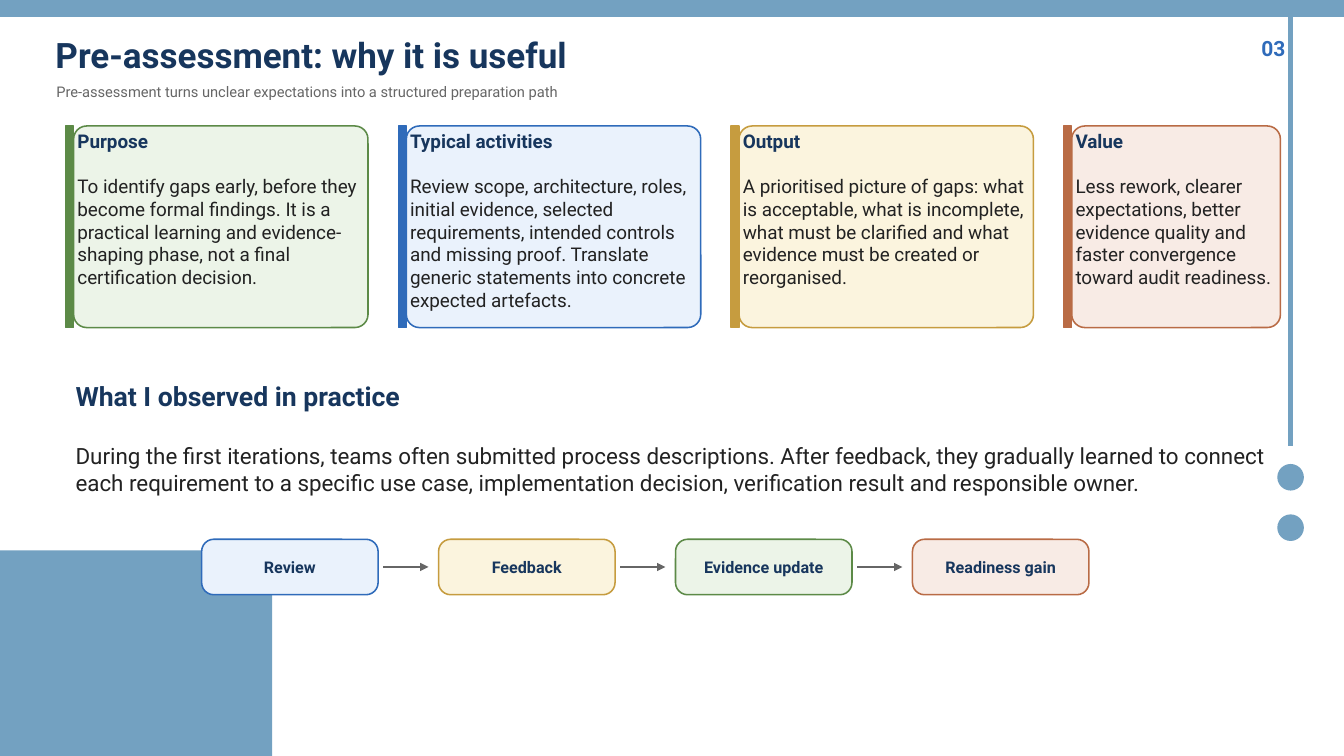
from typing import NamedTuple

from lxml.etree import SubElement
from pptx import Presentation
from pptx.dml.color import RGBColor
from pptx.enum.shapes import MSO_CONNECTOR as Connector, MSO_SHAPE as Preset
from pptx.enum.text import MSO_ANCHOR as Anchor, MSO_AUTO_SIZE as AutoSize, PP_ALIGN as Align
from pptx.oxml.ns import qn
from pptx.util import Inches, Pt

CELL = 0.05
FONT = "Roboto"
NAVY, INK, GREY, BLUE, STEEL = "17365D", "222222", "666666", "2F6BBA", "73A1C1"
GREEN_PAIR = ("ECF4E8", "5C8A47")
BLUE_PAIR = ("EAF2FC", BLUE)
GOLD_PAIR = ("FBF4DE", "C69C3F")
RUST_PAIR = ("F8EBE5", "B96B45")

CARDS = [
    ("Purpose", "To identify gaps early, before they become formal findings. It is a practical "
     "learning and evidence-shaping phase, not a final certification decision.", GREEN_PAIR, 60),
    ("Typical activities", "Review scope, architecture, roles, initial evidence, selected "
     "requirements, intended controls and missing proof. Translate generic statements into "
     "concrete expected artefacts.", BLUE_PAIR, 60),
    ("Output", "A prioritised picture of gaps: what is acceptable, what is incomplete, what must "
     "be clarified and what evidence must be created or reorganised.", GOLD_PAIR, 60),
    ("Value", "Less rework, clearer expectations, better evidence quality and faster convergence "
     "toward audit readiness.", RUST_PAIR, 43),
]
STEPS = [("Review", BLUE_PAIR), ("Feedback", GOLD_PAIR),
         ("Evidence update", GREEN_PAIR), ("Readiness gain", RUST_PAIR)]


class Box(NamedTuple):
    col: float
    row: float
    cols: float
    rows: float


def cells(*counts):
    return [Inches(count * CELL) for count in counts]


def rgb(value):
    return RGBColor.from_string(value)


def apply(target, formats):
    for name, value in formats.items():
        setattr(target, name, value)


def write(frame, paragraphs, anchor=Anchor.MIDDLE, align=Align.LEFT):
    apply(frame, dict(word_wrap=True, auto_size=AutoSize.NONE, vertical_anchor=anchor,
                      margin_left=0, margin_top=0, margin_right=0, margin_bottom=0))
    for index, (text, size, colour, bold, gap) in enumerate(paragraphs):
        paragraph = frame.add_paragraph() if index else frame.paragraphs[0]
        paragraph.alignment = align
        if gap:
            paragraph.space_before = Pt(gap)
        run = paragraph.add_run()
        run.text = text
        apply(run.font, dict(name=FONT, size=Pt(size), bold=bold))
        run.font.color.rgb = rgb(colour)


def add_label(slide, box, text, size, colour, bold=False, align=Align.LEFT):
    label = slide.shapes.add_textbox(*cells(*box))
    write(label.text_frame, [(text, size, colour, bold, 0)], align=align)


def add_block(slide, preset, box, fill, edge=None, weight=1.0, rounding=None):
    block = slide.shapes.add_shape(preset, *cells(*box))
    block.shadow.inherit = False
    block.fill.solid()
    block.fill.fore_color.rgb = rgb(fill)
    if edge:
        block.line.color.rgb = rgb(edge)
        block.line.width = Pt(weight)
    else:
        block.line.fill.background()
    if rounding is not None:
        block.adjustments[0] = rounding
    return block


def add_line(slide, start, end, colour, weight, arrow=False):
    line = slide.shapes.add_connector(Connector.STRAIGHT, *cells(*start, *end))
    line.line.color.rgb = rgb(colour)
    line.line.width = Pt(weight)
    if arrow:
        SubElement(line.line._get_or_add_ln(), qn("a:tailEnd"), type="triangle")
    SubElement(line._element.spPr, qn("a:effectLst"))


def add_decoration(slide, box):
    rail = box.cols - 10.6
    add_block(slide, Preset.RECTANGLE, Box(box.col, box.rows - 40.8, 54, 40.8), STEEL)
    add_line(slide, (rail, 88.4), (rail, box.row), STEEL, 3)
    for row in (92.2, 102.2):
        add_block(slide, Preset.OVAL, Box(rail - 2.5, row, 5, 5), STEEL, STEEL)
    add_block(slide, Preset.RECTANGLE, Box(box.col, box.row, box.cols, 3.2), STEEL, STEEL)


def add_header(slide, box):
    title = slide.shapes.title
    places = cells(box.col, box.row, 214, 8.4)
    apply(title, dict(zip(("left", "top", "width", "height"), places)))
    write(title.text_frame, [("Pre-assessment: why it is useful", 25, NAVY, True, 0)])
    add_label(slide, Box(box.col + 0.2, box.row + 9, 212, 5.2),
              "Pre-assessment turns unclear expectations into a structured preparation path",
              10.5, GREY)
    add_label(slide, Box(box.col + box.cols - 11, box.row, 11, 6), "03", 15, BLUE, True,
              Align.RIGHT)


def add_card(slide, box, heading, text, colours):
    fill, edge = colours
    bar = 1.6
    panel = add_block(slide, Preset.ROUNDED_RECTANGLE,
                      Box(box.col + bar, box.row, box.cols - bar, box.rows),
                      fill, edge, 1.1, 0.065)
    write(panel.text_frame, [(heading, 13.5, NAVY, True, 0), (text, 13.5, INK, False, 16)],
          Anchor.TOP)
    add_block(slide, Preset.RECTANGLE, Box(box.col, box.row, bar, box.rows), edge, edge)


def add_cards(slide, box, pitch=66):
    for index, (heading, text, colours, cols) in enumerate(CARDS):
        add_card(slide, Box(box.col + index * pitch, box.row, cols, box.rows),
                 heading, text, colours)


def add_observation(slide, box):
    add_label(slide, Box(box.col, box.row, box.cols, 7), "What I observed in practice",
              19, NAVY, True)
    add_label(slide, Box(box.col, box.row + 10, box.cols - 2, 16),
              "During the first iterations, teams often submitted process descriptions. After "
              "feedback, they gradually learned to connect each requirement to a specific use "
              "case, implementation decision, verification result and responsible owner.",
              16, INK)


def add_flow(slide, box, gap=12):
    cols = (box.cols - gap * (len(STEPS) - 1)) / len(STEPS)
    middle = box.row + box.rows / 2
    for index, (name, (fill, edge)) in enumerate(STEPS):
        col = box.col + index * (cols + gap)
        step = add_block(slide, Preset.ROUNDED_RECTANGLE, Box(col, box.row, cols, box.rows),
                         fill, edge, 1.1, 0.218)
        write(step.text_frame, [(name, 11.5, NAVY, True, 0)], align=Align.CENTER)
        if index:
            add_line(slide, (col - gap + 1, middle), (col - 2, middle), GREY, 1.5, True)


def main():
    deck = Presentation()
    apply(deck, dict(slide_width=Inches(13.33), slide_height=Inches(7.5)))
    slide = deck.slides.add_slide(deck.slide_layouts[5])
    add_decoration(slide, Box(0, 0, 266.6, 150))
    add_header(slide, Box(11, 6.6, 244, 14.2))
    add_cards(slide, Box(13, 25, 241, 40))
    add_observation(slide, Box(15, 75, 240, 26))
    add_flow(slide, Box(40, 107, 176, 11))
    deck.save("out.pptx")


if __name__ == "__main__":
    main()
